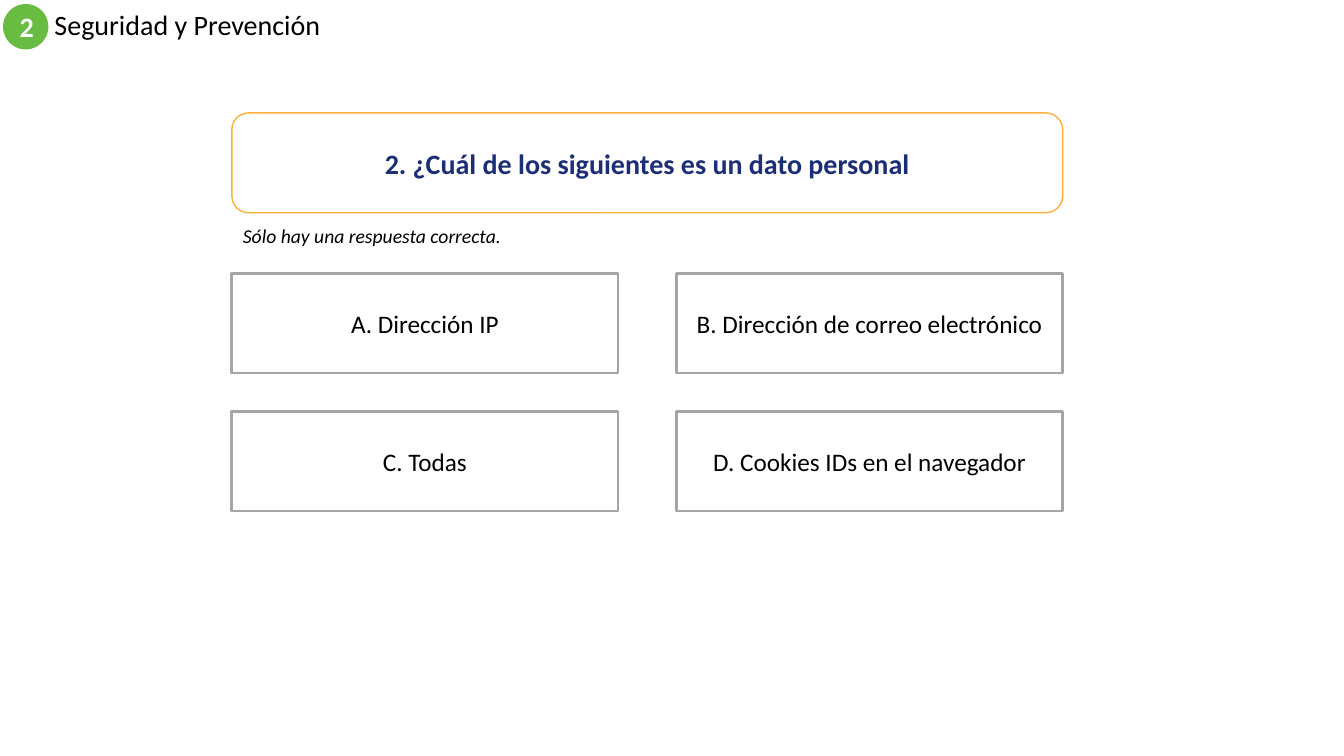
from pptx import Presentation
from pptx.dml.color import RGBColor
from pptx.enum.shapes import MSO_SHAPE as Shape
from pptx.enum.text import MSO_ANCHOR as Anchor, MSO_AUTO_SIZE as AutoSize, PP_ALIGN as Align
from pptx.util import Inches, Pt

COLORS = {
    "white": "FFFFFF",
    "black": "000000",
    "green": "68BC42",
    "orange": "FCB13A",
    "navy": "1C2E78",
    "gray": "A5A5A5",
}


class QuizSlide:
    font_name = "Calibri"

    def __init__(self, presentation):
        self.slide = presentation.slides.add_slide(presentation.slide_layouts[5])

    def color(self, name):
        return RGBColor.from_string(COLORS[name])

    def set_text(self, shape, text, size, color="black", align=Align.LEFT,
                 anchor=Anchor.MIDDLE, bold=False, italic=False):
        frame = shape.text_frame
        frame.word_wrap = True
        frame.auto_size = AutoSize.NONE
        frame.vertical_anchor = anchor
        frame.text = text
        paragraph = frame.paragraphs[0]
        paragraph.alignment = align
        font = paragraph.font
        font.name, font.size = self.font_name, Pt(size)
        font.bold, font.italic = bold, italic
        font.color.rgb = self.color(color)
        return paragraph

    def title(self, text, left, top, width, height):
        shape = self.slide.shapes.title
        shape.left, shape.top = Inches(left), Inches(top)
        shape.width, shape.height = Inches(width), Inches(height)
        self.set_text(shape, text, 20).line_spacing = 0.9

    def note(self, text, left, top, width, height):
        shape = self.slide.shapes.add_textbox(
            Inches(left), Inches(top), Inches(width), Inches(height))
        self.set_text(shape, text, 14, anchor=Anchor.TOP, italic=True)
        shape.text_frame.auto_size = AutoSize.SHAPE_TO_FIT_TEXT

    def box(self, kind, text, left, top, width, height, size,
            fill="white", line=None, line_width=1, color="black", bold=False):
        shape = self.slide.shapes.add_shape(
            kind, Inches(left), Inches(top), Inches(width), Inches(height))
        shape.shadow.inherit = False
        shape.fill.solid()
        shape.fill.fore_color.rgb = self.color(fill)
        if line:
            shape.line.color.rgb = self.color(line)
            shape.line.width = Pt(line_width)
        else:
            shape.line.fill.background()
        self.set_text(shape, text, size, color, Align.CENTER, bold=bold)


def main():
    presentation = Presentation()
    presentation.slide_width = Inches(13.33)
    presentation.slide_height = Inches(7.5)
    quiz = QuizSlide(presentation)

    # Section heading with its number
    quiz.title("Seguridad y Prevención", 0.44, 0.04, 8, 0.45)
    quiz.box(Shape.OVAL, "2", 0.03, 0.04, 0.45, 0.45, 20,
             fill="green", color="white", bold=True)

    # Question
    left, box_height = 2.3, 0.99
    quiz.box(Shape.ROUNDED_RECTANGLE, "2. ¿Cuál de los siguientes es un dato personal",
             left, 1.12, 8.24, box_height, 20, line="orange", color="navy", bold=True)
    quiz.note("Sólo hay una respuesta correcta.", 2.31, 2.17, 2.85, 0.34)

    # Answers in a two by two grid
    answers = ["A. Dirección IP", "B. Dirección de correo electrónico",
               "C. Todas", "D. Cookies IDs en el navegador"]
    for index, answer in enumerate(answers):
        row, column = divmod(index, 2)
        quiz.box(Shape.RECTANGLE, answer, left + 4.41 * column, 2.71 + 1.37 * row,
                 3.83, box_height, 18, line="gray", line_width=2)

    presentation.save("out.pptx")


if __name__ == "__main__":
    main()
